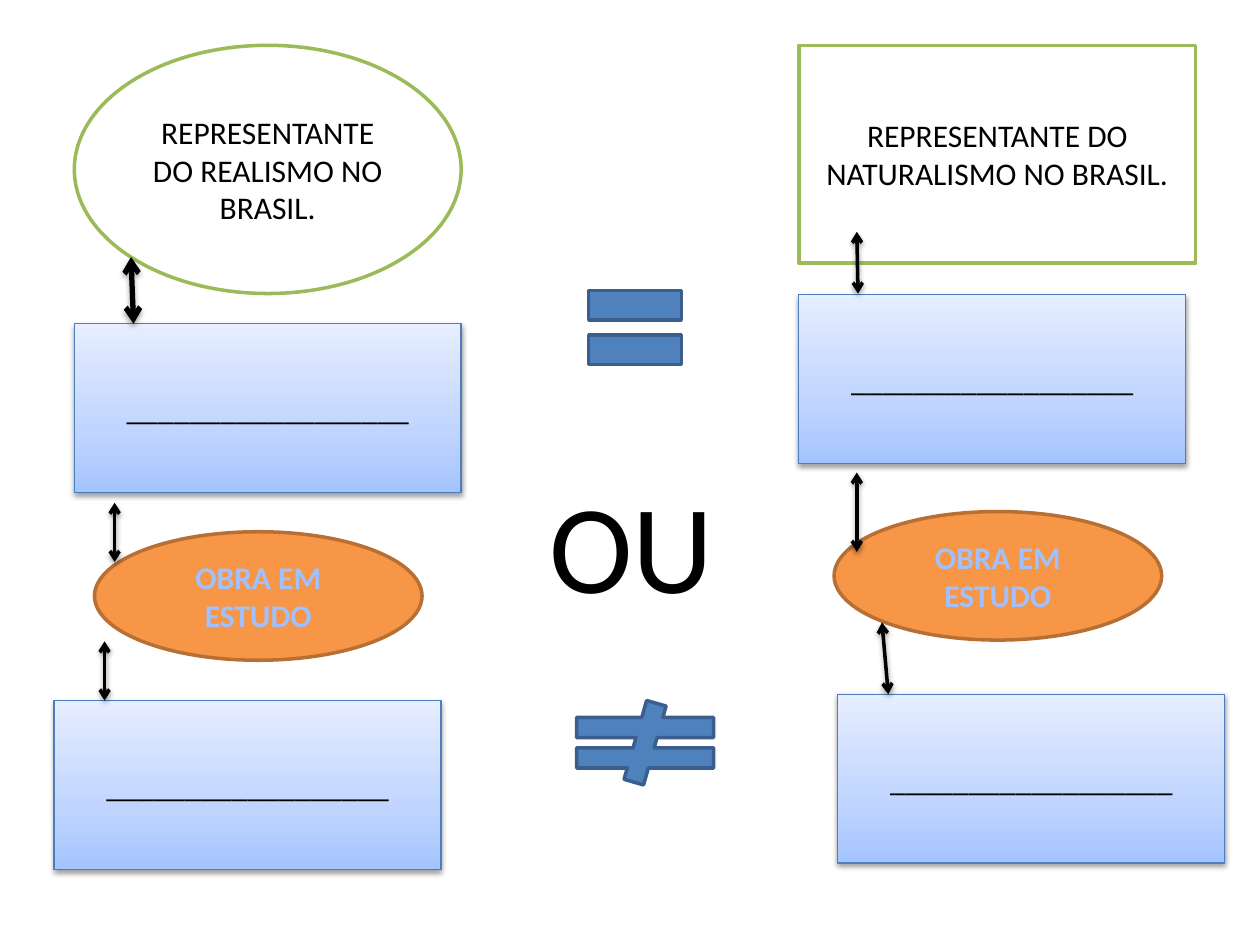
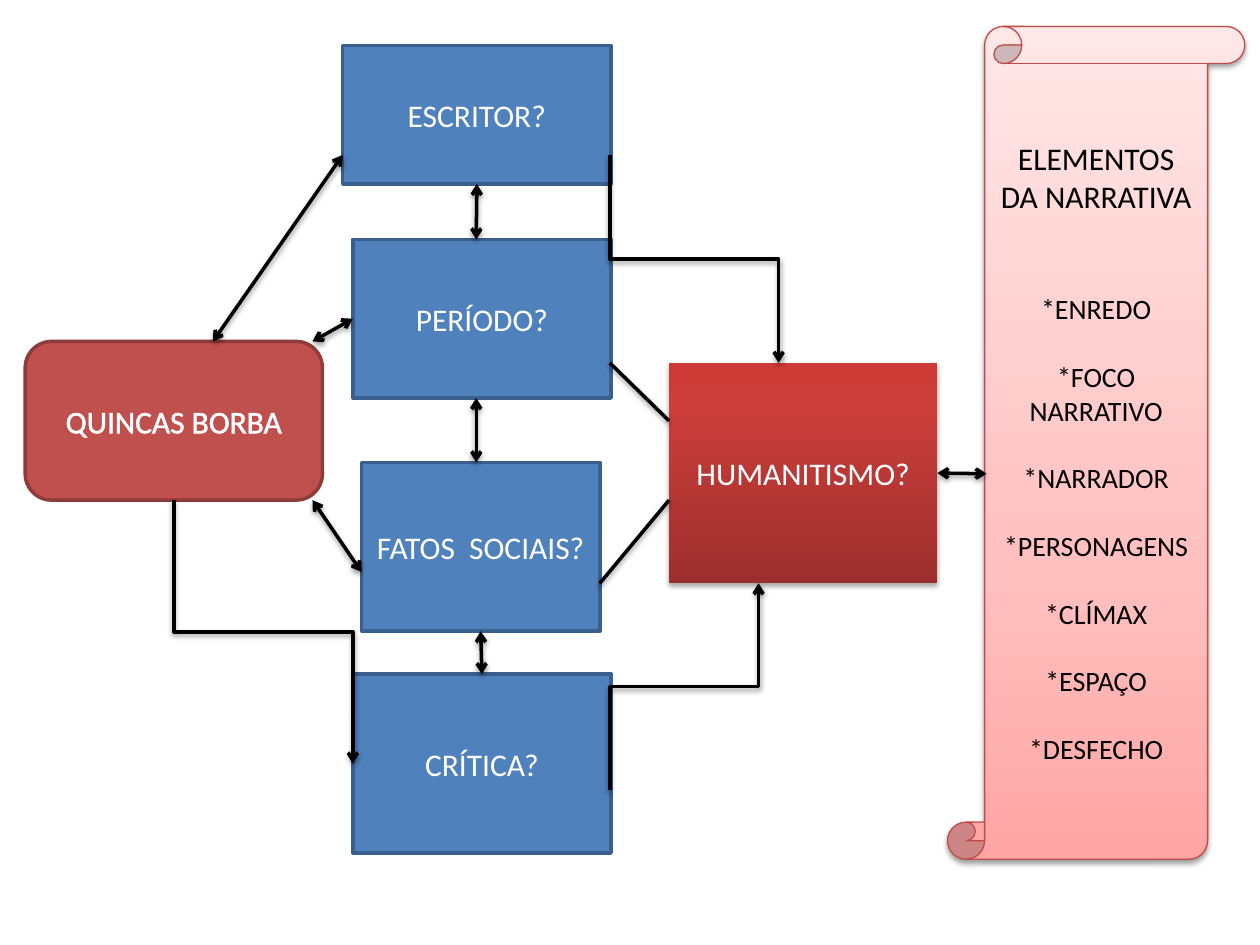
from dataclasses import dataclass

from lxml import etree
from pptx import Presentation
from pptx.dml.color import RGBColor
from pptx.enum.shapes import MSO_CONNECTOR, MSO_SHAPE
from pptx.enum.text import MSO_ANCHOR, PP_ALIGN
from pptx.oxml.ns import qn
from pptx.util import Inches, Pt

RECTANGLE = MSO_SHAPE.RECTANGLE
ELLIPSE = MSO_SHAPE.OVAL
ROUNDED = MSO_SHAPE.FLOWCHART_ALTERNATE_PROCESS
SCROLL = MSO_SHAPE.VERTICAL_SCROLL
EQUAL = MSO_SHAPE.MATH_EQUAL
NOT_EQUAL = MSO_SHAPE.MATH_NOT_EQUAL
STRAIGHT = MSO_CONNECTOR.STRAIGHT
ELBOW = MSO_CONNECTOR.ELBOW
CENTER = PP_ALIGN.CENTER
LEFT = PP_ALIGN.LEFT
MIDDLE = MSO_ANCHOR.MIDDLE
TOP_SIDE, LEFT_SIDE, BOTTOM_SIDE, RIGHT_SIDE = range(4)


@dataclass(frozen=True)
class Gradient:
    stops: tuple
    angle: int = 90


@dataclass(frozen=True)
class Shadow:
    opacity: int
    distance: float
    blur: float = 3.1


@dataclass(frozen=True)
class Style:
    fill: object
    line: str = None
    line_width: float = 2
    text: object = "FFFFFF"
    shadow: Shadow = None
    bold: bool = False
    outline: tuple = None


@dataclass(frozen=True)
class Theme:
    font: str = "Calibri"
    black: str = "000000"
    body_size: int = 18
    item_size: int = 16
    huge_size: int = 72
    soft_shadow: Shadow = Shadow(38, 1.6)
    deep_shadow: Shadow = Shadow(35, 1.8)
    author: Style = Style("FFFFFF", "9BBB59", text="000000")
    answer: Style = Style(
        Gradient(((0, "A4C4FF"), (35, "BFD4FF"), (100, "E6EEFF"))),
        "4B7EBC", 0.75, "000000", soft_shadow)
    work: Style = Style(
        "F79646", "B76F34", bold=True, outline=("467AB8", 0.83),
        text=Gradient(((0, "BFD3F9"), (9, "A0C1FF"), (50, "003D85"),
                       (79, "A0C1FF"), (100, "BFD3F9")), 270))
    topic: Style = Style("4F81BD", "3A5F8C")
    book: Style = Style("C0504D", "8E3B39", outline=("FFFFFF", 1.45))
    concept: Style = Style(
        Gradient(((0, "9C2F2D"), (80, "CB3E3A"), (100, "CE3B37"))),
        shadow=deep_shadow)
    scroll: Style = Style(
        Gradient(((0, "FFA6A5"), (35, "FFC0BF"), (100, "FFE7E7"))),
        "BF4C48", 0.75, "000000", soft_shadow)


THEME = Theme()
BLANK_LINE = "_" * 18


def add_color(parent, color):
    return etree.SubElement(parent, qn("a:srgbClr"), val=color)


def apply_paint(fill, properties, paint):
    if isinstance(paint, Gradient):
        fill.gradient()
        fill.gradient_angle = paint.angle
        stop_list = properties.find(qn("a:gradFill")).find(qn("a:gsLst"))
        for stop in list(stop_list):
            stop_list.remove(stop)
        for position, color in paint.stops:
            stop = etree.SubElement(stop_list, qn("a:gs"), pos=str(position * 1000))
            add_color(stop, color)
    else:
        fill.solid()
        fill.fore_color.rgb = RGBColor.from_string(paint)


def cast_shadow(effects, shadow):
    outer = etree.SubElement(
        effects, qn("a:outerShdw"), blurRad=str(Pt(shadow.blur)),
        dist=str(Pt(shadow.distance)), dir="5400000", rotWithShape="0")
    color = add_color(outer, THEME.black)
    etree.SubElement(color, qn("a:alpha"), val=str(shadow.opacity * 1000))


def write_text(paragraph, text, *, size=THEME.body_size, color=THEME.black,
               bold=False, outline=None, align=CENTER, space_before=0):
    paragraph.alignment = align
    paragraph.space_before = Pt(space_before)
    run = paragraph.add_run()
    run.text = text
    run.font.name = THEME.font
    run.font.size = Pt(size)
    run.font.bold = bold
    properties = run._r.get_or_add_rPr()
    apply_paint(run.font.fill, properties, color)
    if outline:
        outline_color, width = outline
        line = etree.Element(qn("a:ln"), w=str(Pt(width)))
        add_color(etree.SubElement(line, qn("a:solidFill")), outline_color)
        properties.insert(0, line)


def add_box(slide, kind, box, style, text=None):
    shape = slide.shapes.add_shape(kind, *map(Inches, box))
    shape.shadow.inherit = False
    properties = shape._element.spPr
    apply_paint(shape.fill, properties, style.fill)
    if style.line:
        shape.line.color.rgb = RGBColor.from_string(style.line)
        shape.line.width = Pt(style.line_width)
    else:
        shape.line.fill.background()
    if style.shadow:
        cast_shadow(properties.find(qn("a:effectLst")), style.shadow)
    if text:
        shape.text_frame.word_wrap = True
        shape.text_frame.vertical_anchor = MIDDLE
        write_text(shape.text_frame.paragraphs[0], text, color=style.text,
                   bold=style.bold, outline=style.outline)
    return shape


def add_link(slide, begin, end, *, kind=STRAIGHT, head=True, tail=True,
             width=2, shadow=THEME.soft_shadow):
    connector = slide.shapes.add_connector(kind, *map(Inches, (*begin, *end)))
    connector.line.color.rgb = RGBColor.from_string(THEME.black)
    connector.line.width = Pt(width)
    line = connector.line._get_or_add_ln()
    for tag, shown in (("a:headEnd", head), ("a:tailEnd", tail)):
        if shown:
            etree.SubElement(line, qn(tag), type="arrow")
    effects = etree.SubElement(connector._element.spPr, qn("a:effectLst"))
    cast_shadow(effects, shadow)
    return connector


def add_vertical_elbow(slide, begin, end):
    center_x = (begin[0] + end[0]) / 2
    center_y = (begin[1] + end[1]) / 2
    half_width = (end[0] - begin[0]) / 2
    half_height = abs(end[1] - begin[1]) / 2
    goes_down = end[1] > begin[1]
    offset = -half_width if goes_down else half_width
    connector = add_link(
        slide, (center_x + half_height, center_y + offset),
        (center_x - half_height, center_y - offset), kind=ELBOW, head=False)
    rotation = 270 if goes_down else 90
    connector._element.spPr.find(qn("a:xfrm")).set("rot", str(rotation * 60000))


def build_comparison(slide):
    add_box(slide, ELLIPSE, (0.59, 0.36, 3.07, 1.97), THEME.author,
            "REPRESENTANTE DO REALISMO NO BRASIL.")
    add_box(slide, RECTANGLE, (6.34, 0.36, 3.15, 1.73), THEME.author,
            "REPRESENTANTE DO NATURALISMO NO BRASIL.")
    for left, top in ((0.43, 5.56), (6.34, 2.34), (0.59, 2.57), (6.65, 5.51)):
        add_box(slide, RECTANGLE, (left, top, 3.07, 1.34), THEME.answer, BLANK_LINE)
    for left, top in ((0.75, 4.22), (6.62, 4.06)):
        add_box(slide, ELLIPSE, (left, top, 2.6, 1.02), THEME.work, "OBRA EM ESTUDO")

    add_link(slide, (1.04, 2.04), (1.06, 2.57), width=3, shadow=THEME.deep_shadow)
    for begin, end in (
        ((0.91, 3.99), (0.91, 4.46)),
        ((0.83, 5.09), (0.83, 5.56)),
        ((6.8, 1.84), (6.81, 2.33)),
        ((6.8, 3.75), (6.8, 4.38)),
        ((7, 4.94), (7.05, 5.51)),
    ):
        add_link(slide, begin, end)

    add_box(slide, EQUAL, (4.54, 2.1, 1, 1), THEME.topic)
    choice = slide.shapes.add_textbox(*map(Inches, (4.26, 3.66, 1.57, 1.31)))
    choice.text_frame.word_wrap = True
    write_text(choice.text_frame.paragraphs[0], "OU", size=THEME.huge_size, align=LEFT)
    different = add_box(slide, NOT_EQUAL, (4.38, 5.56, 1.48, 0.67), THEME.topic)
    for index, value in enumerate((0.24, 63.58, 0.12)):
        different.adjustments[index] = value


def add_narrative_scroll(slide):
    scroll = add_box(slide, SCROLL, (7.52, 0.21, 2.36, 6.61), THEME.scroll,
                     "ELEMENTOS DA NARRATIVA")
    for item, space_before in (
        ("*ENREDO", 44),
        ("*FOCO", 19.5),
        ("NARRATIVO", 0),
        ("*NARRADOR", 19.5),
        ("*PERSONAGENS", 19.5),
        ("*CLÍMAX", 19.5),
        ("*ESPAÇO", 19.5),
        ("*DESFECHO", 19.5),
    ):
        write_text(scroll.text_frame.add_paragraph(), item,
                   size=THEME.item_size, space_before=space_before)


def build_concept_map(slide):
    add_box(slide, ROUNDED, (0.2, 2.71, 2.36, 1.26), THEME.book, "QUINCAS BORBA")
    writer, period, facts, criticism = [
        add_box(slide, RECTANGLE, box, THEME.topic, text)
        for text, box in (
            ("ESCRITOR?", (2.72, 0.36, 2.13, 1.1)),
            ("PERÍODO?", (2.8, 1.9, 2.05, 1.26)),
            ("FATOS  SOCIAIS?", (2.87, 3.67, 1.89, 1.34)),
            ("CRÍTICA?", (2.8, 5.35, 2.05, 1.42)),
        )
    ]
    humanitism = add_box(slide, RECTANGLE, (5.31, 2.88, 2.13, 1.75),
                         THEME.concept, "HUMANITISMO?")
    add_narrative_scroll(slide)

    add_link(slide, (1.69, 2.71), (2.72, 1.23))
    book_to_period = add_link(slide, (2.48, 2.71), (2.8, 2.53))
    book_to_period.end_connect(period, LEFT_SIDE)
    add_link(slide, (2.48, 3.97), (2.87, 4.54))
    writer_to_period = add_link(slide, (3.78, 1.46), (3.78, 1.9))
    writer_to_period.begin_connect(writer, BOTTOM_SIDE)
    add_link(slide, (3.78, 3.16), (3.78, 3.67))
    facts_to_criticism = add_link(slide, (3.82, 5.01), (3.82, 5.35))
    facts_to_criticism.begin_connect(facts, BOTTOM_SIDE)
    facts_to_criticism.end_connect(criticism, TOP_SIDE)
    for begin, end in (((4.84, 2.88), (5.31, 3.34)), ((4.76, 4.63), (5.31, 3.97))):
        add_link(slide, begin, end, head=False, tail=False)
    humanitism_to_scroll = add_link(slide, (7.44, 3.76), (7.83, 3.76))
    humanitism_to_scroll.begin_connect(humanitism, RIGHT_SIDE)

    for begin, end in (
        ((1.38, 3.97), (2.8, 6.06)),
        ((4.84, 1.23), (6.18, 2.88)),
        ((4.84, 6.27), (6.02, 4.63)),
    ):
        add_vertical_elbow(slide, begin, end)


def main():
    presentation = Presentation()
    presentation.slide_width = Inches(10)
    presentation.slide_height = Inches(7.5)
    blank_layout = presentation.slide_layouts.get_by_name("Blank")
    for build in (build_comparison, build_concept_map):
        build(presentation.slides.add_slide(blank_layout))
    presentation.save("out.pptx")


if __name__ == "__main__":
    main()
